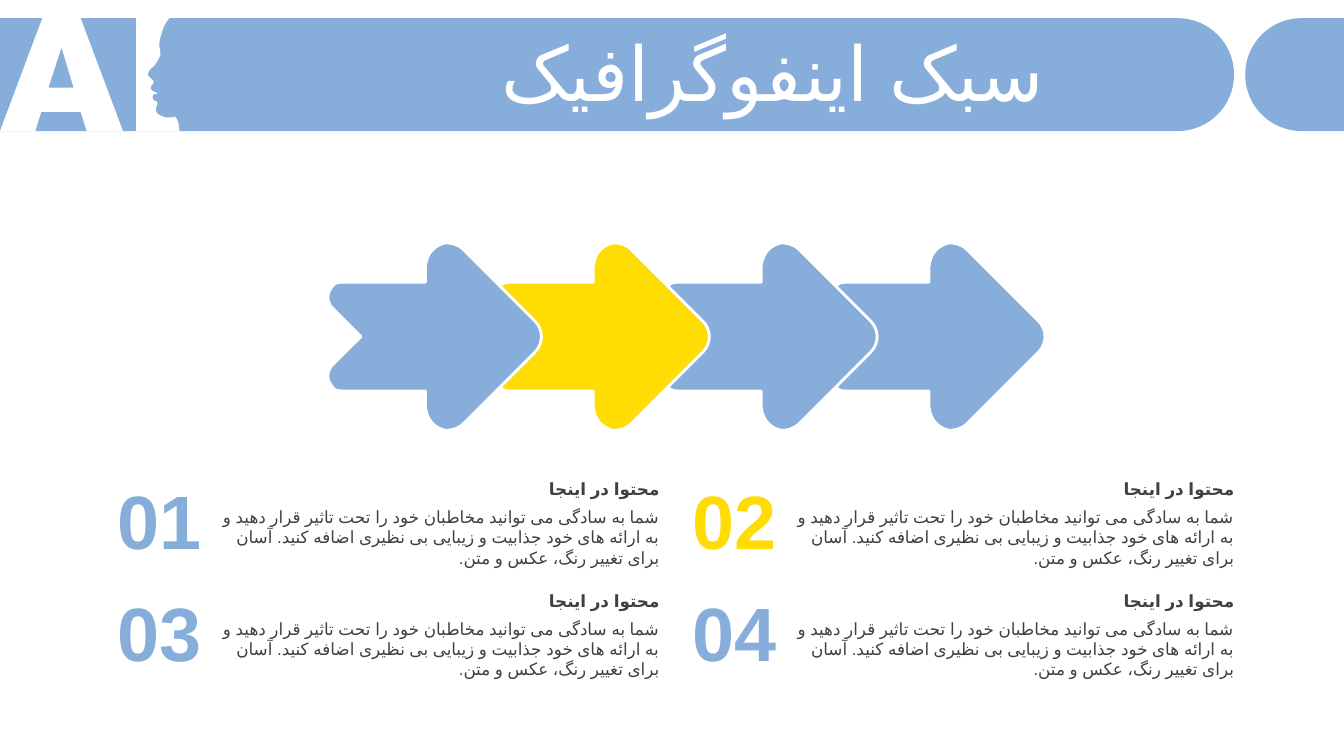
from lxml import etree
from pptx import Presentation
from pptx.dml.color import RGBColor
from pptx.enum.text import MSO_ANCHOR, MSO_AUTO_SIZE, PP_ALIGN
from pptx.oxml.ns import qn
from pptx.util import Inches, Pt

BLUE = RGBColor(0x87, 0xAD, 0xDB)
YELLOW = RGBColor(0xFE, 0xDC, 0x04)
WHITE = RGBColor(0xFF, 0xFF, 0xFF)
GRAY = RGBColor(0x40, 0x40, 0x40)
FONT = "Arial"
MIDDLE, TOP = MSO_ANCHOR.MIDDLE, MSO_ANCHOR.TOP
CENTER, RIGHT = PP_ALIGN.CENTER, PP_ALIGN.RIGHT
GROW, FIXED = MSO_AUTO_SIZE.SHAPE_TO_FIT_TEXT, MSO_AUTO_SIZE.NONE


def add_outline(contours, color, dx=0, mirror_y=None):
    builder, sizes = None, []
    for contour in contours:
        pts = [(seg[i], seg[i + 1]) for seg in contour for i in range(0, len(seg), 2)]
        steps = [len(seg) // 2 for seg in contour[1:]]
        if mirror_y:
            pts += [(x, 2 * mirror_y - y) for x, y in reversed(pts[:-1])]
            steps += steps[::-1]
        sizes += steps
        pts = [(Inches(x + dx), Inches(y)) for x, y in pts]
        if builder is None:
            builder = slide.shapes.build_freeform(*pts[0])
        else:
            builder.move_to(*pts[0])
        builder.add_line_segments(pts[1:], close=True)
    sp = builder.convert_to_shape()
    outline = next(sp._element.iter(qn("a:path")))
    lines = iter(outline.findall(qn("a:lnTo")))
    for size in sizes:
        group = [next(lines) for _ in range(size)]
        if size == 3:
            curve = etree.Element(qn("a:cubicBezTo"))
            group[0].addprevious(curve)
            for line in group:
                curve.append(line[0])
                outline.remove(line)
    sp.shadow.inherit = False
    sp.fill.solid()
    sp.fill.fore_color.rgb = color
    sp.line.fill.background()
    return sp


def write_text(sp, box, text, size, color, bold=False, align=RIGHT,
               anchor=MIDDLE, insets=(0, 0.05, 0.1, 0.05), fit=GROW):
    sp.left, sp.top, sp.width, sp.height = [Inches(v) for v in box]
    tf = sp.text_frame
    tf.word_wrap = True
    tf.auto_size = fit
    tf.vertical_anchor = anchor
    tf.margin_left, tf.margin_top, tf.margin_right, tf.margin_bottom = [
        Inches(v) for v in insets]
    p = tf.paragraphs[0]
    p.alignment = align
    p._p.get_or_add_pPr().set("rtl", "1")
    r = p.add_run()
    r.text = text
    r.font.size = Pt(size)
    r.font.bold = bold
    r.font.color.rgb = color
    r.font.name = FONT
    rPr = r._r.get_or_add_rPr()
    rPr.set("lang", "fa-IR")
    etree.SubElement(rPr, qn("a:cs")).set("typeface", FONT)
    return p


prs = Presentation()
prs.slide_width, prs.slide_height = Inches(13.33), Inches(7.5)
slide = prs.slides.add_slide(prs.slide_layouts[5])

BAND_TOP, BAND_MID, BAND_END = 0.18, 0.74, 1.3
banner = [(0, BAND_TOP), (11.68, BAND_TOP),
          (11.99, BAND_TOP, 12.24, 0.43, 12.24, BAND_MID),
          (12.24, 1.05, 11.99, BAND_END, 11.68, BAND_END), (0, BAND_END)]
end_cap = [(13.33, BAND_TOP), (13.33, BAND_END), (12.91, BAND_END),
           (12.6, BAND_END, 12.35, 1.05, 12.35, BAND_MID),
           (12.35, 0.43, 12.6, BAND_TOP, 12.91, BAND_TOP)]
letter_a = [(0.42, BAND_TOP), (0.8, BAND_TOP), (1.22, BAND_END),
            (0.86, BAND_END), (0.8, 1.11), (0.41, 1.11),
            (0.35, BAND_END), (0, BAND_END)]
letter_hole = [(0.61, 0.47), (0.48, 0.87), (0.73, 0.87)]
profile = [(1.35, BAND_TOP), (1.68, BAND_TOP),
           (1.66, 0.2, 1.62, 0.26, 1.61, 0.31),
           (1.59, 0.37), (1.58, 0.42, 1.58, 0.45, 1.58, 0.46),
           (1.59, 0.48, 1.59, 0.51, 1.59, 0.55), (1.58, 0.57),
           (1.57, 0.59, 1.53, 0.66, 1.51, 0.67),
           (1.48, 0.69, 1.46, 0.73, 1.47, 0.75),
           (1.48, 0.77, 1.5, 0.78, 1.51, 0.79),
           (1.52, 0.79, 1.53, 0.81, 1.52, 0.83),
           (1.52, 0.84, 1.5, 0.84, 1.5, 0.85),
           (1.49, 0.87, 1.49, 0.89, 1.51, 0.9),
           (1.53, 0.91, 1.56, 0.92, 1.56, 0.93),
           (1.56, 0.93, 1.52, 0.93, 1.52, 0.94),
           (1.51, 0.95, 1.51, 0.97, 1.52, 0.99),
           (1.52, 1, 1.55, 1, 1.56, 1.01),
           (1.57, 1.03, 1.56, 1.03, 1.55, 1.06),
           (1.54, 1.09, 1.54, 1.13, 1.6, 1.15),
           (1.64, 1.17, 1.68, 1.17, 1.72, 1.16), (1.74, 1.16),
           (1.76, 1.18, 1.78, 1.24, 1.78, BAND_END), (1.35, BAND_END)]
add_outline([banner], BLUE)
add_outline([letter_a, letter_hole, profile], WHITE)
add_outline([end_cap], BLUE)

ARROW_MID, ARROW_PITCH = 3.34, 1.665
half_arrow = [(3.58, ARROW_MID), (3.29, 3.05),
              (3.24, 2.99, 3.24, 2.9, 3.29, 2.85),
              (3.33, 2.8, 3.32, 2.8, 3.49, 2.8),
              (4.22, 2.8), (4.22, 2.64), (4.23, 2.59),
              (4.24, 2.55, 4.26, 2.51, 4.29, 2.48),
              (4.33, 2.44, 4.37, 2.42, 4.42, 2.41),
              (4.47, 2.41, 4.54, 2.42, 4.6, 2.48),
              (5.31, 3.19), (5.35, 3.23, 5.37, 3.29, 5.37, ARROW_MID)]
arrow_colors = [BLUE, YELLOW, BLUE, BLUE]
for i in reversed(range(len(arrow_colors))):
    arrow = add_outline([half_arrow], arrow_colors[i], i * ARROW_PITCH, ARROW_MID)
    arrow.line.color.rgb = WHITE
    arrow.line.width = Pt(2)

title = slide.shapes.title
slide.shapes._spTree.append(title._element)
p = write_text(title, (2.32, 0.37, 10.69, 0.79), "سبک اینفوگرافیک",
               54, WHITE, align=CENTER, insets=(0.1, 0.05, 0.1, 0.05), fit=FIXED)
p.line_spacing = 0.9

HEADING = "محتوا در اینجا"
BODY = ("شما به سادگی می توانید مخاطبان خود را تحت تاثیر قرار دهید و به ارائه های "
        "خود جذابیت و زیبایی بی نظیری اضافه کنید. آسان برای تغییر رنگ، عکس و متن.")
for i, color in enumerate(arrow_colors):
    row, col = divmod(i, 2)
    x, y = 1.06 + col * 5.7, 4.7 + row * 1.11
    heading, body, number = [slide.shapes.add_textbox(0, 0, 0, 0) for _ in range(3)]
    write_text(heading, (x + 1.13, y, 4.45, 0.3), HEADING, 12, GRAY, bold=True)
    write_text(body, (x + 1.13, y + 0.28, 4.45, 0.5), BODY, 12, GRAY, anchor=TOP)
    write_text(number, (x, y, 0.94, 0.91), f"{i + 1:02d}", 54, color, bold=True,
               insets=(0, 0, 0, 0))

prs.save("out.pptx")
